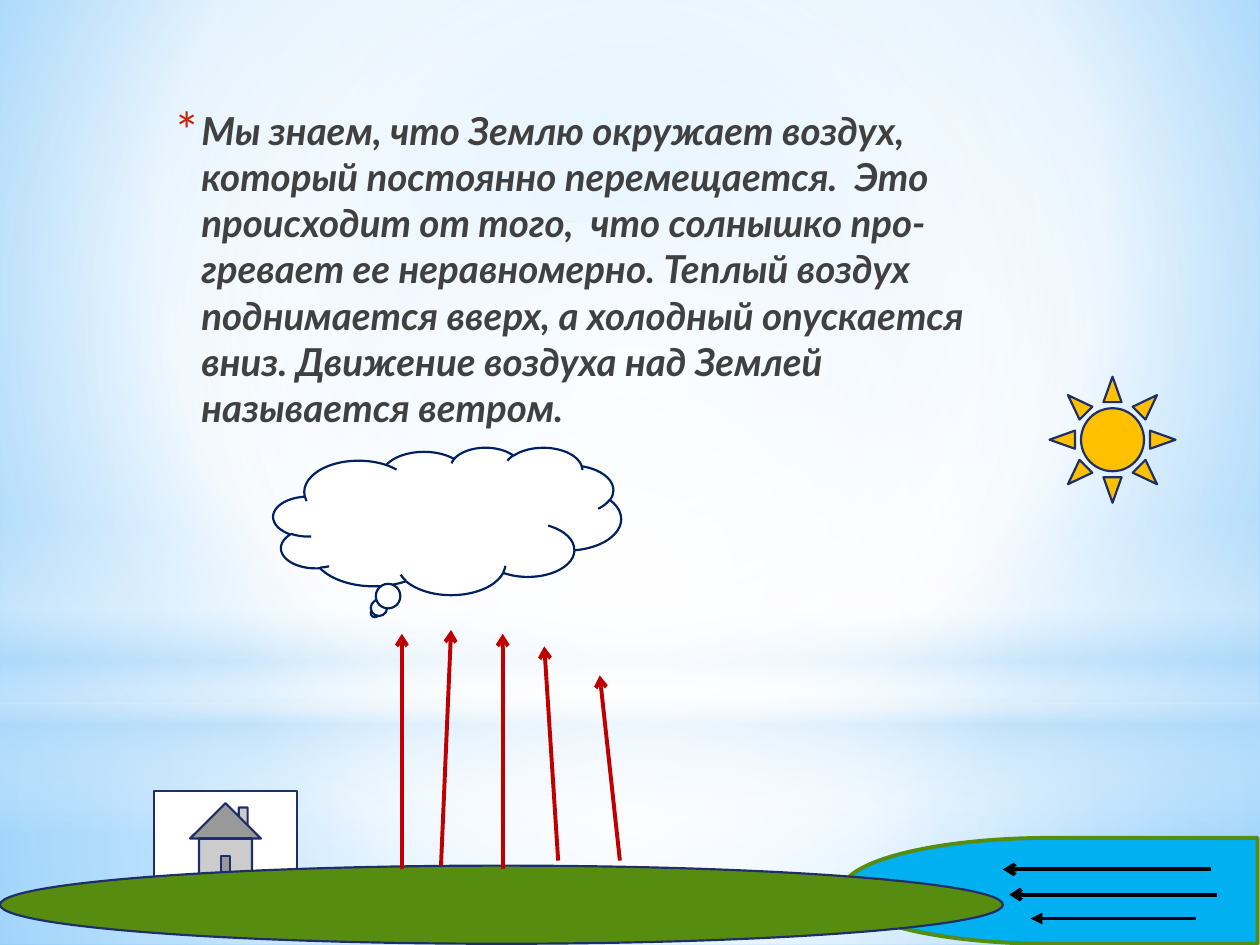
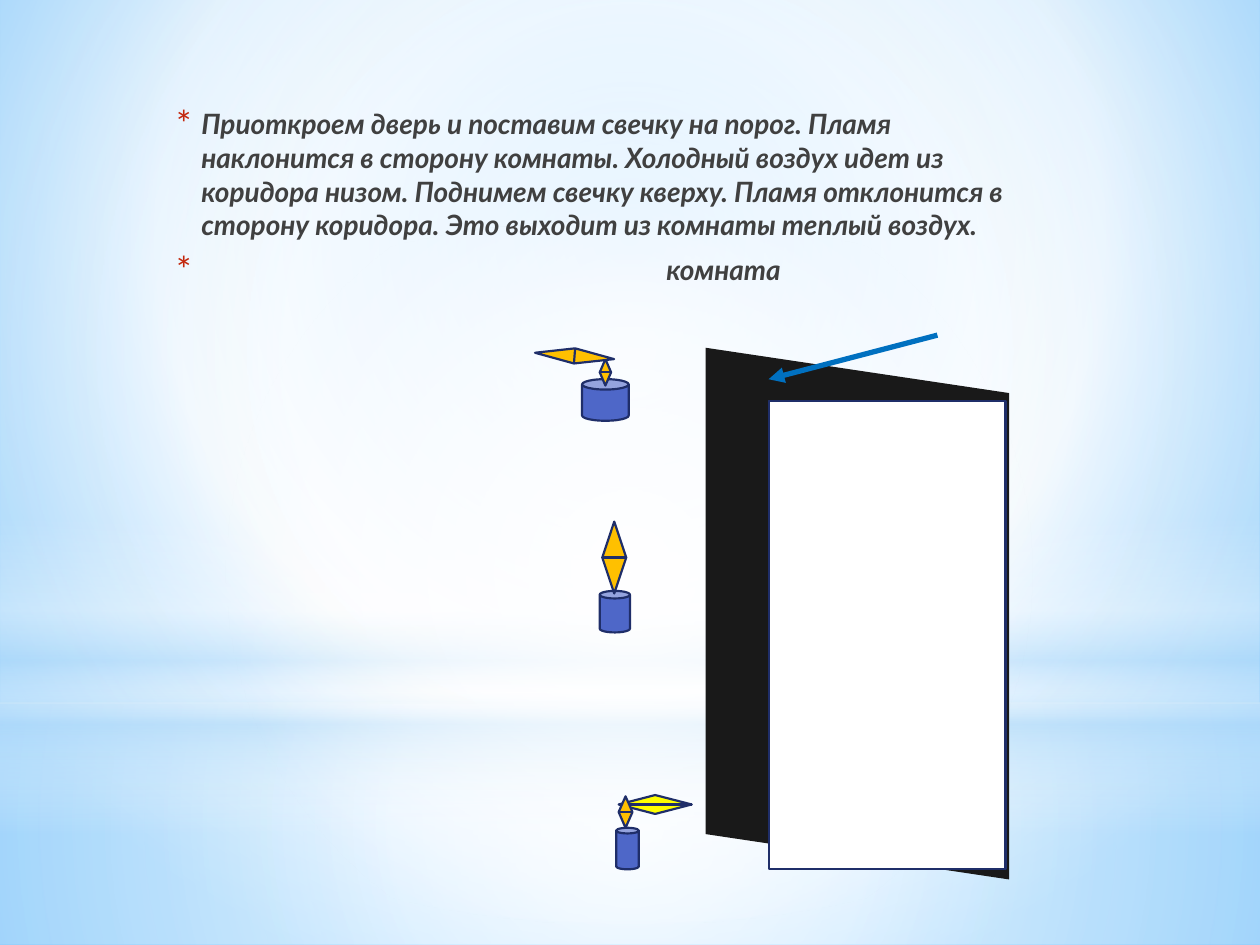
from lxml import etree
from pptx import Presentation
from pptx.dml.color import RGBColor
from pptx.enum.shapes import MSO_CONNECTOR, MSO_SHAPE as SHAPE
from pptx.oxml import parse_xml
from pptx.oxml.ns import nsdecls, qn
from pptx.util import Inches, Pt

FONT = "Lato"
COLORS = {
    "sky": "9ED5FF", "deep_sky": "5BB9FF", "haze": "B4DCFA", "white": "FFFFFF",
    "text": "404040", "bullet": "C3260C", "outline": "1F2E69", "navy": "002060",
    "grass": "568D11", "water": "00B0F0", "amber": "FFC000", "yellow": "FFFF00",
    "wax": "4E67C8", "door": "191919", "warm": "C00000", "cold": "000000",
    "draught": "0070C0",
}

# Backdrop: stops are (position %, colour, opacity %)
CENTER = (50, 50, 50, 50)
BACKGROUND = ([(0, "sky", 100), (60, "white", 100), (100, "deep_sky", 100)],
              (20, 10, 20, 60))
LAYERS = [  # preset, box, stops, focus (None = vertical)
    (SHAPE.RECTANGLE, (0, 5.58, 10, 1.92),
     [(0, "white", 91), (37, "white", 76), (100, "haze", 79)], CENTER),
    (SHAPE.RECTANGLE, (0, 0, 10, 5.58),
     [(0, "white", 89), (48, "white", 62), (100, "haze", 79)], CENTER),
    (SHAPE.RECTANGLE, (0, 4.12, 10, 2.5),
     [(0, "white", 0), (29, "white", 30), (45, "haze", 40),
      (55, "white", 26), (65, "haze", 60), (100, "white", 0)], None),
    (SHAPE.OVAL, (0, 1.75, 10, 5.58),
     [(0, "white", 100), (56, "white", 0)], CENTER),
]

# Slide text: (paragraph, left margin)
BODY_BOX = (1.25, 0.8, 7, 3.8)
BULLET_AT = 0.05
WIND_TEXT = [
    ("Мы знаем, что Землю окружает воздух, который постоянно перемещается.  "
     "Это  происходит от того,  что солнышко про-гревает ее неравномерно. "
     "Теплый воздух поднимается вверх, а холодный опускается вниз. "
     "Движение воздуха над Землей называется ветром.", 0.25),
]
CANDLE_TEXT = [
    ("Приоткроем дверь и поставим свечку на порог. Пламя наклонится в сторону "
     "комнаты. Холодный воздух идет из коридора низом. Поднимем свечку кверху. "
     "Пламя отклонится в сторону коридора. Это выходит из комнаты теплый "
     "воздух.", 0.25),
    ("комната", 3.94),
]

# Slide 1: preset, box, fill, line, line width, rotation
LANDSCAPE = [
    (SHAPE.ACTION_BUTTON_HOME, (1.22, 6.28, 1.14, 0.75), "white", "outline", 1.25, 0),
    (SHAPE.SUN, (8.33, 2.99, 1, 1), "amber", "outline", 1.25, 0),
    (SHAPE.CLOUD_CALLOUT, (2.17, 3.55, 2.76, 1.17), "white", "navy", 1.25, 0),
    (SHAPE.FLOWCHART_DELAY, (6.68, 6.65, 3.3, 0.84), "water", "grass", 2.25, 180),
    (SHAPE.OVAL, (0, 6.87, 7.96, 0.62), "grass", "outline", 1.25, 0),
]
WARM_AIR = [  # start, tip
    ((4.92, 6.83), (4.76, 5.36)), ((4.43, 6.83), (4.32, 5.13)),
    ((3.19, 6.9), (3.19, 5.03)), ((3.99, 6.9), (3.99, 5.03)),
    ((3.5, 6.87), (3.58, 5)),
]
COLD_AIR = [  # start, tip, arrowhead
    ((9.61, 6.9), (7.96, 6.9), "arrow"),
    ((9.49, 7.29), (8.18, 7.29), "triangle"),
    ((9.66, 7.1), (8.01, 7.1), "arrow"),
]

# Slide 2
DOOR = [(5.6, 2.76), (8.01, 3.12), (8.01, 6.98), (5.6, 6.62)]
DOORWAY = (6.1, 3.18, 1.88, 3.72)
DRAUGHT = ((7.44, 2.66), (6.1, 3.01))
CANDLES = [  # candle box, then flames as (box, colour, rotation)
    ((4.89, 6.57, 0.18, 0.33), [((4.91, 6.31, 0.58, 0.15), "yellow", 0),
                                ((4.91, 6.32, 0.11, 0.25), "amber", 0)]),
    ((4.62, 3.01, 0.37, 0.33), [((4.76, 2.85, 0.09, 0.21), "amber", 0),
                                ((4.5, 2.51, 0.12, 0.63), "amber", 274.6)]),
    ((4.76, 4.69, 0.24, 0.33), [((4.78, 4.14, 0.19, 0.57), "amber", 0)]),
]


def rgb(name):
    return RGBColor.from_string(COLORS[name])


def set_gradient(fill, parent, stops, focus):
    """Give a fill multi-stop colours with opacity."""
    fill.gradient()
    stops_xml = "".join(
        f'<a:gs pos="{pos * 1000}"><a:srgbClr val="{COLORS[color]}">'
        f'<a:alpha val="{opacity * 1000}"/></a:srgbClr></a:gs>'
        for pos, color, opacity in stops)
    if focus:
        sides = " ".join(f'{k}="{v * 1000}"' for k, v in zip("ltrb", focus))
        direction = f'<a:path path="circle"><a:fillToRect {sides}/></a:path>'
    else:
        direction = '<a:lin ang="5400000" scaled="0"/>'
    old = parent.find(".//" + qn("a:gradFill"))
    old.getparent().replace(old, parse_xml(
        f'<a:gradFill {nsdecls("a")} rotWithShape="1"><a:gsLst>{stops_xml}</a:gsLst>'
        f'{direction}</a:gradFill>'))


def add_backdrop(prs, s):
    """Draw the shared layers once and move them to the slide master."""
    master = prs.slide_master
    set_gradient(master.background.fill, master.element.find(".//" + qn("p:bg")),
                 *BACKGROUND)
    for number, (preset, box, stops, focus) in enumerate(LAYERS, 101):
        sp = s.shapes.add_shape(preset, *map(Inches, box))
        sp.shadow.inherit = False
        sp.line.fill.background()
        set_gradient(sp.fill, sp.element.spPr, stops, focus)
        sp.element.find(".//" + qn("p:cNvPr")).set("id", str(number))
        master.shapes.element.append(sp.element)


def style(sp, fill, line, width=1.25, rotation=0):
    sp.shadow.inherit = False
    sp.fill.solid()
    sp.fill.fore_color.rgb = rgb(fill)
    sp.line.color.rgb = rgb(line)
    sp.line.width = Pt(width)
    sp.rotation = rotation


def add_preset(s, preset, box, *look):
    style(s.shapes.add_shape(preset, *map(Inches, box)), *look)


def add_arrow(s, start, tip, color, width=2.25, head="arrow"):
    line = s.shapes.add_connector(MSO_CONNECTOR.STRAIGHT, *map(Inches, start + tip))
    line.line.color.rgb = rgb(color)
    line.line.width = Pt(width)
    etree.SubElement(line.line._get_or_add_ln(), qn("a:tailEnd"), type=head)
    etree.SubElement(line.element.spPr, qn("a:effectLst"))


def add_body(s, paragraphs, size):
    tf = s.shapes.add_textbox(*map(Inches, BODY_BOX)).text_frame
    tf.word_wrap = True
    for i, (text, margin) in enumerate(paragraphs):
        p = tf.add_paragraph() if i else tf.paragraphs[0]
        p.text = text
        font = p.runs[0].font
        font.name, font.size, font.bold, font.italic = FONT, Pt(size), True, True
        font.color.rgb = rgb("text")
        # Hanging asterisk bullet
        pPr = p._p.get_or_add_pPr()
        pPr.set("marL", str(Inches(margin)))
        pPr.set("indent", str(Inches(BULLET_AT - margin)))
        for xml in (
            '<a:spcBef {}><a:spcPct val="20000"/></a:spcBef>',
            '<a:spcAft {}><a:spcPts val="300"/></a:spcAft>',
            f'<a:buClr {{}}><a:srgbClr val="{COLORS["bullet"]}"/></a:buClr>',
            '<a:buSzPct {} val="130000"/>',
            f'<a:buFont {{}} typeface="{FONT}"/>',
            '<a:buChar {} char="*"/>',
        ):
            pPr.append(parse_xml(xml.format(nsdecls("a"))))


def build_wind(s):
    add_body(s, WIND_TEXT, 22)
    for item in LANDSCAPE:
        add_preset(s, *item)
    for start, tip in WARM_AIR:
        add_arrow(s, start, tip, "warm")
    for start, tip, head in COLD_AIR:
        add_arrow(s, start, tip, "cold", head=head)


def build_candles(s):
    add_body(s, CANDLE_TEXT, 16)
    # Open door
    corners = [tuple(map(Inches, point)) for point in DOOR]
    outline = s.shapes.build_freeform(*corners[0])
    outline.add_line_segments(corners[1:], close=True)
    door = outline.convert_to_shape()
    style(door, "door", "door")
    door.line.fill.background()
    add_preset(s, SHAPE.RECTANGLE, DOORWAY, "white", "outline")
    # Candles and flames
    for candle, flames in CANDLES:
        add_preset(s, SHAPE.CAN, candle, "wax", "outline")
        for box, color, rotation in flames:
            add_preset(s, SHAPE.FLOWCHART_SORT, box, color, "outline", 1.25, rotation)
    add_arrow(s, *DRAUGHT, "draught", 3, "triangle")


def main():
    prs = Presentation()
    prs.slide_width, prs.slide_height = Inches(10), Inches(7.5)
    blank = prs.slide_layouts[6]
    wind, candles = (prs.slides.add_slide(blank) for _ in range(2))
    add_backdrop(prs, wind)
    build_wind(wind)
    build_candles(candles)
    prs.save("out.pptx")


if __name__ == "__main__":
    main()
